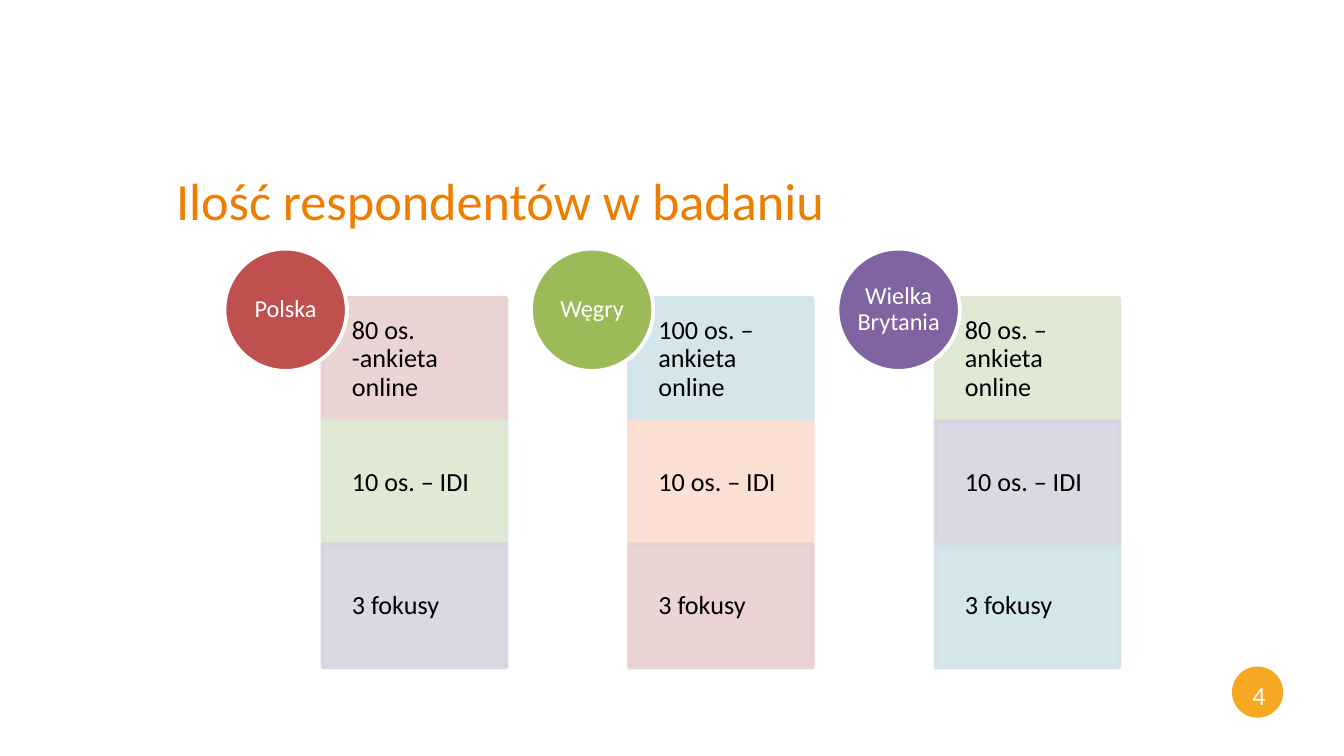
import pptx
import pptx.util
import pptx.dml.color
import pptx.enum.shapes
import pptx.enum.text
import pptx.oxml.ns
import lxml.etree

Pt = pptx.util.Pt
SHAPE = pptx.enum.shapes.MSO_SHAPE
ALIGN = pptx.enum.text.PP_ALIGN
ANCHOR = pptx.enum.text.MSO_ANCHOR

COLORS = {
    "orange": "EF7D00", "amber": "F7A823", "white": "FFFFFF", "black": "000000",
    "red": "C0504D", "green": "9BBB59", "purple": "8064A2",
    "pale red": "E8D0D0", "pale green": "DEE7D1", "pale purple": "D8D3E0",
    "pale blue": "D0E3EA", "pale orange": "FCDDCF",
}
TITLE = "Ilość respondentów w badaniu"
PAGE_NUMBER = "4"
COUNTRIES = [
    ("Polska", "red", [("80 os. -ankieta online", "pale red"),
                       ("10 os. – IDI", "pale green"),
                       ("3 fokusy", "pale purple")]),
    ("Węgry", "green", [("100 os. – ankieta online", "pale blue"),
                        ("10 os. – IDI", "pale orange"),
                        ("3 fokusy", "pale red")]),
    ("Wielka Brytania", "purple", [("80 os. – ankieta online", "pale green"),
                                   ("10 os. – IDI", "pale purple"),
                                   ("3 fokusy", "pale blue")]),
]

COUNTRY_LEFT, COUNTRY_TOP, COUNTRY_SIZE = 120.24, 133.2, 65.5
COLUMN_PITCH = 164.2
GROUP_OFFSET, GROUP_TOP = 52.5, 159.6
GROUP_WIDTH, GROUP_HEIGHT = 98.6, 66


def rgb(name):
    return pptx.dml.color.RGBColor.from_string(COLORS[name])


def write(shape, text, size, color, align=ALIGN.LEFT, insets=(0, 0, 0, 0), spacing=0.9):
    frame = shape.text_frame
    frame.text = text
    frame.word_wrap = True
    frame.vertical_anchor = ANCHOR.MIDDLE
    frame.margin_left, frame.margin_top, frame.margin_right, frame.margin_bottom = map(Pt, insets)
    paragraph = frame.paragraphs[0]
    paragraph.alignment = align
    paragraph.line_spacing = spacing
    paragraph.font.name = "Calibri"
    paragraph.font.size = Pt(size)
    paragraph.font.color.rgb = rgb(color)


def add_block(slide, kind, box, fill, line=None, opacity=100):
    block = slide.shapes.add_shape(kind, *map(Pt, box))
    block.shadow.inherit = False
    block.fill.solid()
    block.fill.fore_color.rgb = rgb(fill)
    if line:
        block.line.color.rgb = rgb(line)
        block.line.width = Pt(2)
    else:
        block.line.fill.background()
    if opacity < 100:
        for color in block._element.spPr.iter(pptx.oxml.ns.qn("a:srgbClr")):
            alpha = lxml.etree.SubElement(color, pptx.oxml.ns.qn("a:alpha"))
            alpha.set("val", str(opacity * 1000))
    return block


def add_country(slide, column, name, color, groups):
    left = COUNTRY_LEFT + column * COLUMN_PITCH
    for row, (group, fill) in enumerate(groups):
        box = (left + GROUP_OFFSET, GROUP_TOP + row * GROUP_HEIGHT, GROUP_WIDTH, GROUP_HEIGHT)
        block = add_block(slide, SHAPE.RECTANGLE, box, fill, fill, 90)
        write(block, group, 14, "black", insets=(15.8, 8, 8, 8))
    box = (left, COUNTRY_TOP, COUNTRY_SIZE, COUNTRY_SIZE)
    write(add_block(slide, SHAPE.OVAL, box, color, "white"), name, 13, "white", ALIGN.CENTER)


def main():
    deck = pptx.Presentation()
    deck.slide_width, deck.slide_height = Pt(720), Pt(405)
    slide = deck.slides.add_slide(deck.slide_layouts[5])

    title = slide.shapes.title
    title.left, title.top, title.width, title.height = map(Pt, (87.1, 86.4, 510.5, 41))
    write(title, TITLE, 28, "orange", insets=(7.2, 3.6, 7.2, 3.6), spacing=1)

    add_block(slide, SHAPE.OVAL, (660, 357.1, 27.4, 27.4), "amber")
    number = slide.shapes.add_textbox(*map(Pt, (663.8, 360, 20.9, 24.5)))
    write(number, PAGE_NUMBER, 14, "white", insets=(7.2, 3.6, 0, 3.6), spacing=1)

    for column, country in enumerate(COUNTRIES):
        add_country(slide, column, *country)

    deck.save("out.pptx")


if __name__ == "__main__":
    main()
